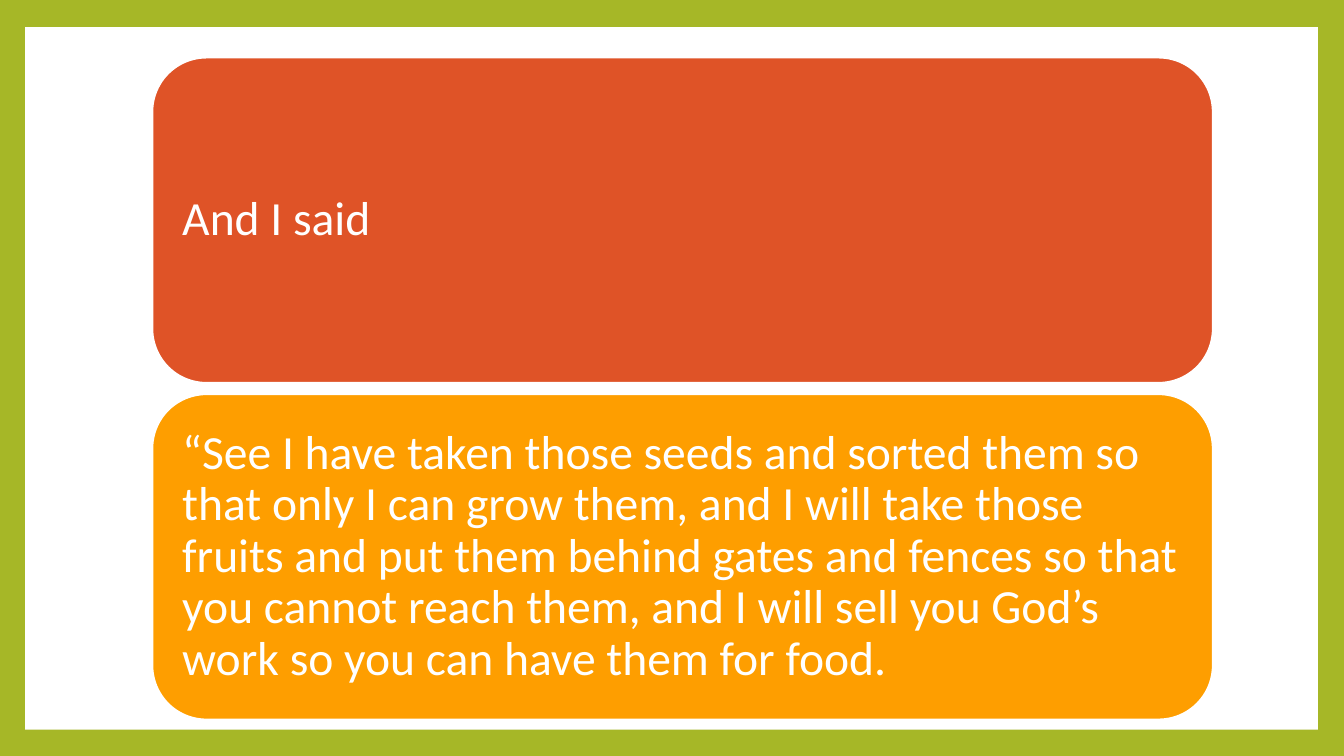
from pptx import Presentation
from pptx.dml.color import RGBColor
from pptx.enum.shapes import MSO_SHAPE
from pptx.enum.text import MSO_ANCHOR, PP_ALIGN
from pptx.util import Inches, Pt


def color(value):
    return RGBColor.from_string(value)


def add_panel(page, kind, left, top, width, height, fill):
    panel = page.shapes.add_shape(
        kind, Inches(left), Inches(top), Inches(width), Inches(height))
    panel.shadow.inherit = False
    panel.fill.solid()
    panel.fill.fore_color.rgb = color(fill)
    return panel


deck = Presentation()
deck.slide_width = Inches(13.33)
deck.slide_height = Inches(7.5)
page = deck.slides.add_slide(deck.slide_layouts[6])
page.background.fill.solid()
page.background.fill.fore_color.rgb = color("A6B727")

sheet = add_panel(page, MSO_SHAPE.RECTANGLE, 0.25, 0.27, 12.82, 6.97, "FFFFFF")
sheet.line.fill.background()

cards = [
    ("DF5327", "And I said"),
    ("FE9E00", "“See I have taken those seeds and sorted them so that only I can "
               "grow them, and I will take those fruits and put them behind gates "
               "and fences so that you cannot reach them, and I will sell you "
               "God’s work so you can have them for food."),
]
card_top, card_step = 0.57, 3.34

for index, (fill, words) in enumerate(cards):
    card = add_panel(page, MSO_SHAPE.ROUNDED_RECTANGLE,
                     1.51, card_top + index * card_step, 10.52, 3.23, fill)
    card.line.color.rgb = color("FFFFFF")
    card.line.width = Pt(1.5)

    frame = card.text_frame
    frame.word_wrap = True
    frame.vertical_anchor = MSO_ANCHOR.MIDDLE
    frame.margin_left = frame.margin_right = Inches(0.14)
    frame.margin_top = frame.margin_bottom = Inches(0.14)

    para = frame.paragraphs[0]
    para.text = words
    para.alignment = PP_ALIGN.LEFT
    para.line_spacing = 0.9
    para.font.name = "Calibri"
    para.font.size = Pt(34)
    para.font.color.rgb = color("FFFFFF")

deck.save("out.pptx")
